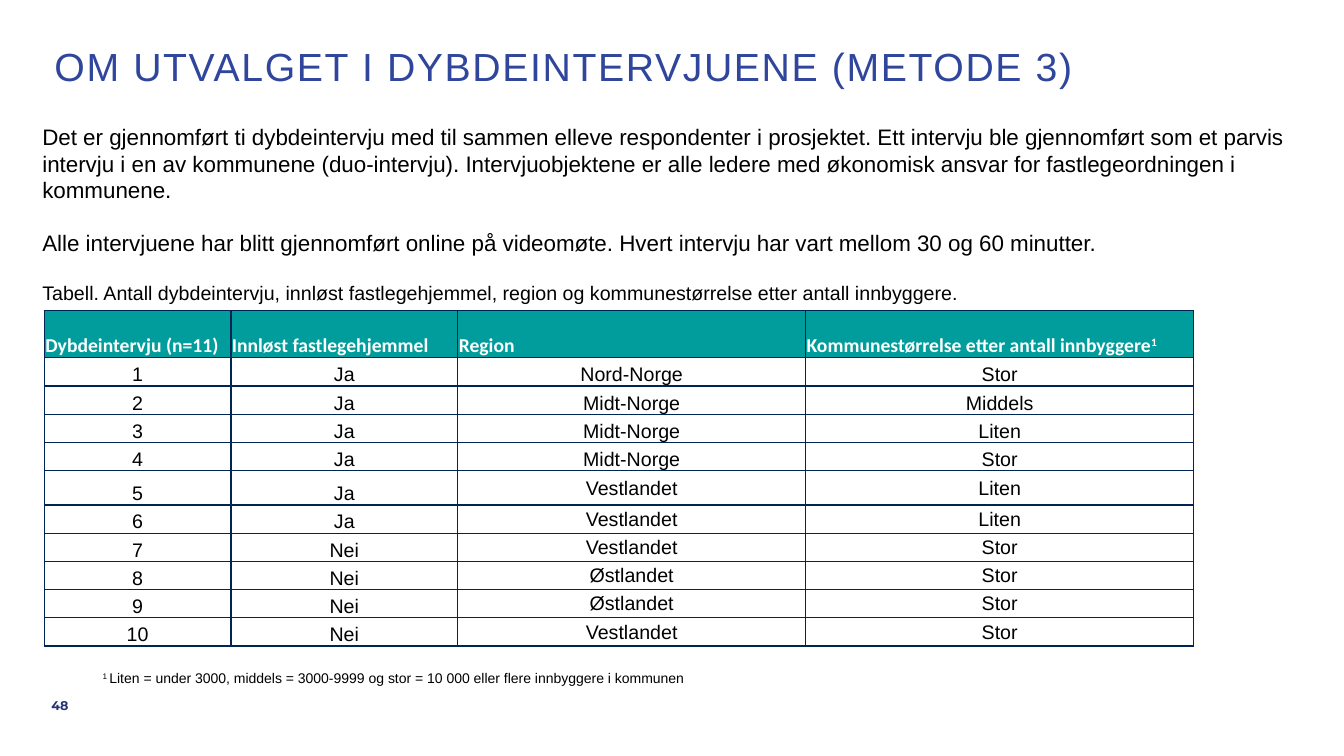
from dataclasses import dataclass

from lxml.etree import SubElement
from pptx import Presentation
from pptx.dml.color import RGBColor
from pptx.enum.text import MSO_ANCHOR, PP_ALIGN
from pptx.oxml.ns import qn
from pptx.util import Inches, Pt


@dataclass(frozen=True)
class Theme:
    title: str = "2F469C"
    text: str = "000000"
    header_text: str = "FFFFFF"
    header_fill: str = "009D9C"
    border: str = "002554"
    page: str = "233475"
    font: str = "Arial"
    header_font: str = "Calibri"
    page_font: str = "Montserrat"
    title_size: int = 28
    body_size: int = 16
    table_size: int = 14
    note_size: int = 10
    page_size: int = 9


THEME = Theme()

TITLE = "OM UTVALGET I DYBDEINTERVJUENE (METODE 3)"
INTRO = [
    ("Det er gjennomført ti dybdeintervju med til sammen elleve respondenter i prosjektet. "
     "Ett intervju ble gjennomført som et parvis intervju i en av kommunene (duo-intervju). "
     "Intervjuobjektene er alle ledere med økonomisk ansvar for fastlegeordningen i kommunene.",
     THEME.body_size),
    ("Alle intervjuene har blitt gjennomført online på videomøte. "
     "Hvert intervju har vart mellom 30 og 60 minutter.", THEME.body_size),
    ("Tabell. Antall dybdeintervju, innløst fastlegehjemmel, region og kommunestørrelse "
     "etter antall innbyggere.", THEME.table_size),
]
HEADERS = ["Dybdeintervju (n=11)", "Innløst fastlegehjemmel", "Region",
           "Kommunestørrelse etter antall innbyggere"]
INTERVIEWS = [
    ("Ja", "Nord-Norge", "Stor"),
    ("Ja", "Midt-Norge", "Middels"),
    ("Ja", "Midt-Norge", "Liten"),
    ("Ja", "Midt-Norge", "Stor"),
    ("Ja", "Vestlandet", "Liten"),
    ("Ja", "Vestlandet", "Liten"),
    ("Nei", "Vestlandet", "Stor"),
    ("Nei", "Østlandet", "Stor"),
    ("Nei", "Østlandet", "Stor"),
    ("Nei", "Vestlandet", "Stor"),
]
COLUMN_WIDTHS = [1.85, 2.25, 3.45, 3.85]
HEADER_HEIGHT, ROW_HEIGHT, TALL_HEIGHT = 0.47, 0.28, 0.34
TALL_ROW = 5
FOOTNOTE = "Liten = under 3000, middels = 3000-9999 og stor = 10 000 eller flere innbyggere i kommunen"


def set_all(target, **values):
    for name, value in values.items():
        setattr(target, name, value)


def add_run(p, text, size, color=THEME.text, font=THEME.font, bold=False, superscript=False):
    r = p.add_run()
    r.text = text
    set_all(r.font, size=Pt(size), name=font, bold=bold)
    r.font.color.rgb = RGBColor.from_string(color)
    if superscript:
        r.font._element.set("baseline", "30000")
    return r


def place(sp, left, top, width, height):
    set_all(sp, left=Inches(left), top=Inches(top), width=Inches(width), height=Inches(height))


def add_text_box(s, box, side_inset=0.0, anchor=MSO_ANCHOR.TOP):
    tf = s.shapes.add_textbox(*map(Inches, box)).text_frame
    set_all(tf, word_wrap=True, vertical_anchor=anchor,
            margin_left=Inches(side_inset), margin_right=Inches(side_inset))
    return tf


def add_title(s):
    sp = s.shapes.title
    place(sp, 0.44, 0.42, 12.45, 0.71)
    tf = sp.text_frame
    set_all(tf, vertical_anchor=MSO_ANCHOR.TOP, word_wrap=True)
    p = tf.paragraphs[0]
    set_all(p, alignment=PP_ALIGN.LEFT, line_spacing=0.9)
    r = add_run(p, TITLE, THEME.title_size, THEME.title)
    r.font._element.set("spc", "120")


def add_intro(s):
    tf = add_text_box(s, (0.42, 1.17, 12.66, 1.9))
    for i, (text, size) in enumerate(INTRO):
        p = tf.add_paragraph() if i else tf.paragraphs[0]
        if i:
            p.space_before = Pt(18)
        add_run(p, text, size)


def add_borders(cell):
    """Draw a one-point line on all four sides; call before the cell is filled."""
    tc_pr = cell._tc.get_or_add_tcPr()
    for side in ("a:lnL", "a:lnR", "a:lnT", "a:lnB"):
        ln = SubElement(tc_pr, qn(side), w=str(Pt(1)))
        SubElement(SubElement(ln, qn("a:solidFill")), qn("a:srgbClr"), val=THEME.border)


def format_cell(cell, anchor):
    set_all(cell, vertical_anchor=anchor, margin_left=Inches(0.01), margin_right=Inches(0.01),
            margin_top=Inches(0.01), margin_bottom=0)
    add_borders(cell)
    return cell.text_frame.paragraphs[0]


def add_interview_table(s):
    heights = [HEADER_HEIGHT] + [ROW_HEIGHT] * len(INTERVIEWS)
    heights[TALL_ROW] = TALL_HEIGHT
    box = (0.44, 3.08, sum(COLUMN_WIDTHS), sum(heights))
    table = s.shapes.add_table(len(heights), len(HEADERS), *map(Inches, box)).table
    table.horz_banding = False
    for column, width in zip(table.columns, COLUMN_WIDTHS):
        column.width = Inches(width)
    for row, height in zip(table.rows, heights):
        row.height = Inches(height)

    header = dict(size=THEME.table_size, color=THEME.header_text,
                  font=THEME.header_font, bold=True)
    for j, text in enumerate(HEADERS):
        cell = table.cell(0, j)
        p = format_cell(cell, MSO_ANCHOR.BOTTOM)
        cell.fill.solid()
        cell.fill.fore_color.rgb = RGBColor.from_string(THEME.header_fill)
        add_run(p, text, **header)
    add_run(p, "1", superscript=True, **header)

    for i, interview in enumerate(INTERVIEWS, 1):
        for j, text in enumerate((str(i), *interview)):
            cell = table.cell(i, j)
            centred = i >= TALL_ROW and j >= 2
            p = format_cell(cell, MSO_ANCHOR.MIDDLE if centred else MSO_ANCHOR.BOTTOM)
            cell.fill.background()
            p.alignment = PP_ALIGN.CENTER
            add_run(p, text, THEME.table_size)


def add_footnote(s):
    p = add_text_box(s, (0.92, 6.59, 9.72, 0.27), side_inset=0.1).paragraphs[0]
    p.alignment = PP_ALIGN.JUSTIFY
    add_run(p, "1 ", THEME.note_size, superscript=True)
    add_run(p, FOOTNOTE, THEME.note_size)


def add_page_number(s):
    tf = add_text_box(s, (0.42, 6.8, 0.33, 0.4), anchor=MSO_ANCHOR.MIDDLE)
    tf.margin_right = Inches(0.07)
    p = tf.paragraphs[0]
    p.alignment = PP_ALIGN.RIGHT
    add_run(p, "48", THEME.page_size, THEME.page, THEME.page_font, bold=True)


def main():
    prs = Presentation()
    set_all(prs, slide_width=Inches(13.33), slide_height=Inches(7.5))
    s = prs.slides.add_slide(prs.slide_layouts[5])
    add_title(s)
    add_intro(s)
    add_interview_table(s)
    add_footnote(s)
    add_page_number(s)
    prs.save("out.pptx")


if __name__ == "__main__":
    main()
